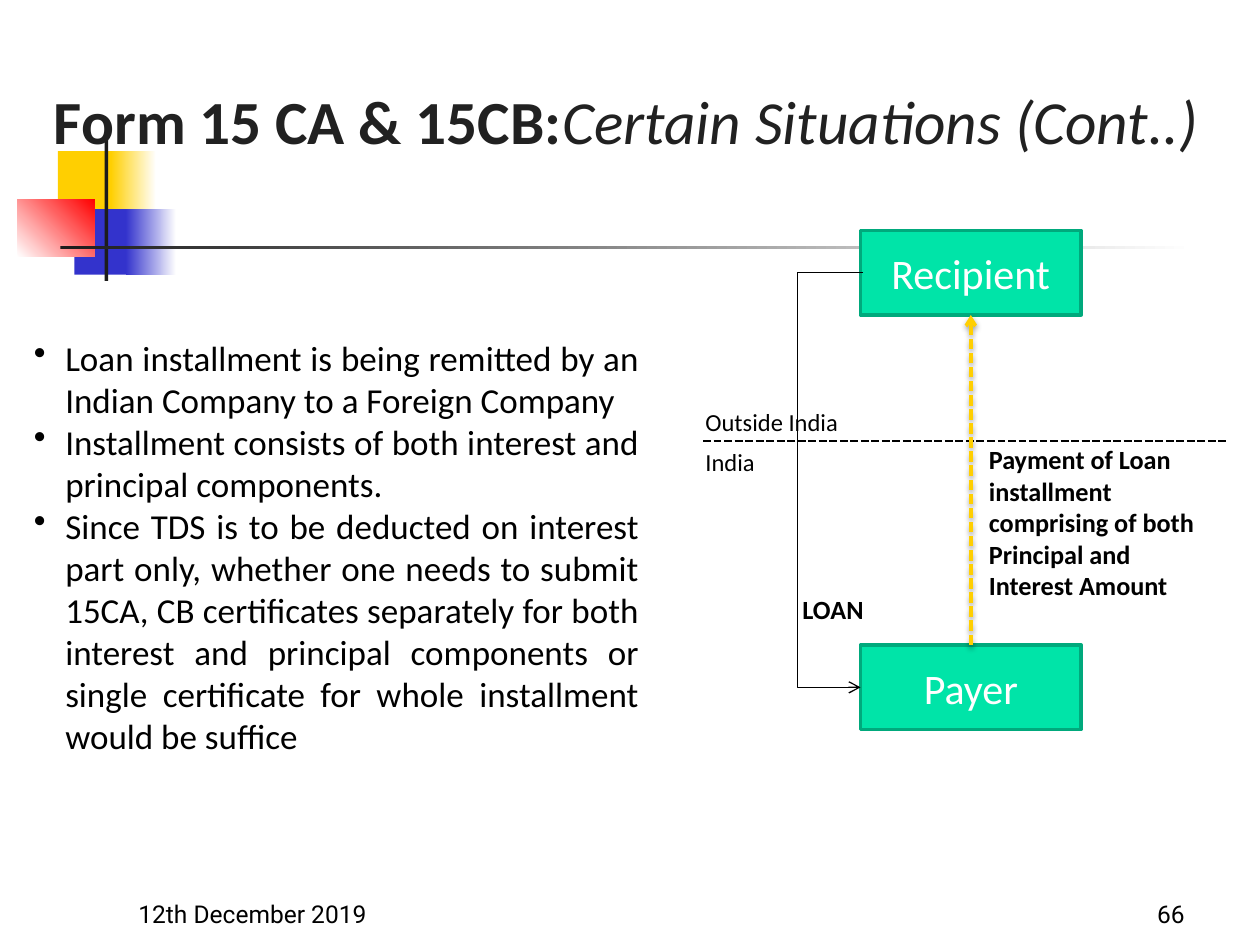
from dataclasses import dataclass

from lxml import etree
from pptx import Presentation
from pptx.dml.color import RGBColor
from pptx.enum.dml import MSO_LINE
from pptx.enum.shapes import MSO_CONNECTOR, MSO_SHAPE
from pptx.enum.text import MSO_ANCHOR, PP_ALIGN
from pptx.oxml.ns import qn
from pptx.util import Inches, Pt

RECT = MSO_SHAPE.RECTANGLE
STRAIGHT, ELBOW = MSO_CONNECTOR.STRAIGHT, MSO_CONNECTOR.ELBOW
DASHED = MSO_LINE.SQUARE_DOT
TOP, MIDDLE, BOTTOM = MSO_ANCHOR.TOP, MSO_ANCHOR.MIDDLE, MSO_ANCHOR.BOTTOM
LEFT, CENTER, RIGHT, JUSTIFY = PP_ALIGN.LEFT, PP_ALIGN.CENTER, PP_ALIGN.RIGHT, PP_ALIGN.JUSTIFY


@dataclass(frozen=True)
class Theme:
    font: str = "Calibri"
    footer_font: str = "Roboto"
    black: str = "000000"
    white: str = "FFFFFF"
    title: str = "212121"
    bar: str = "1C1C1C"
    yellow: str = "FFCF01"
    blue: str = "3333CC"
    red: str = "FF0000"
    green: str = "00E4A8"
    green_edge: str = "00A97C"
    title_size: int = 35
    box_size: int = 24
    body_size: int = 20
    label_size: int = 15
    small_size: int = 14


T = Theme()

DECORATION = [
    ((0.46, 1.2, 0.48, 0.52), [T.yellow], 0),
    ((0.88, 1.2, 0.36, 0.52), [T.yellow, T.white], 0),
    ((0.59, 1.66, 0.46, 0.52), [T.blue], 0),
    ((1, 1.66, 0.4, 0.52), [T.blue, T.white], 0),
    ((0.14, 1.58, 0.61, 0.46), [T.white, T.red], 45),
    ((0.83, 1.08, 0.03, 1.15), [T.bar], 0),
    ((0.48, 1.95, 9, 0.03), [T.bar, T.white], 0),
]
TITLE = [("Form 15 CA & 15CB:", True, False), ("Certain Situations (Cont..)", False, True)]
BULLETS = [
    "Loan installment is being remitted by an Indian Company to a Foreign Company",
    "Installment consists of both interest and principal components.",
    "Since TDS is to be deducted on interest part only, whether one needs to submit "
    "15CA, CB certificates separately for both interest and principal components or "
    "single certificate for whole installment would be suffice",
]
LABELS = [
    ("Outside India", (5.5, 3.18, 2, 0.34), T.small_size, False),
    ("India", (5.5, 3.5, 1, 0.34), T.small_size, False),
    ("LOAN", (6.27, 4.66, 2, 0.35), T.label_size, True),
    ("Payment of Loan installment comprising of both Principal and Interest Amount",
     (7.75, 3.47, 2, 1.36), T.label_size, True),
]
FOOTERS = [
    ("12th December 2019", (1, 6.92, 2.08, 0.5), LEFT),
    ("66", (7.42, 6.92, 2.08, 0.5), RIGHT),
]
BOX_LEFT, BOX_W, BOX_H = 6.83, 1.75, 0.67
RECIPIENT_TOP, PAYER_TOP = 1.83, 5.12
LOAN_START, LOAN_TURN = 6.85, 6.33


def inches(values):
    return [Inches(v) for v in values]


def rgb(color):
    return RGBColor.from_string(color)


def set_font(font, size, color=T.black, bold=False, name=T.font):
    font.name, font.size, font.bold = name, Pt(size), bold
    font.color.rgb = rgb(color)


def add_rect(s, at, colors, angle=0):
    sp = s.shapes.add_shape(RECT, *inches(at))
    sp.shadow.inherit = False
    sp.line.fill.background()
    if len(colors) == 1:
        sp.fill.solid()
        sp.fill.fore_color.rgb = rgb(colors[0])
    else:
        sp.fill.gradient()
        sp.fill.gradient_angle = angle
        for stop, color in zip(sp.fill.gradient_stops, colors):
            stop.color.rgb = rgb(color)
    return sp


def add_party(s, text, top):
    sp = add_rect(s, (BOX_LEFT, top, BOX_W, BOX_H), [T.green])
    sp.line.color.rgb = rgb(T.green_edge)
    sp.line.width = Pt(2)
    sp.text_frame.vertical_anchor = MIDDLE
    p = sp.text_frame.paragraphs[0]
    p.text, p.alignment = text, CENTER
    set_font(p.font, T.box_size, T.white)
    return sp


def add_text(s, at, lines, size, bold=False, name=T.font, align=LEFT, anchor=TOP):
    tf = s.shapes.add_textbox(*inches(at)).text_frame
    tf.word_wrap, tf.vertical_anchor = True, anchor
    for i, line in enumerate(lines):
        p = tf.add_paragraph() if i else tf.paragraphs[0]
        p.text, p.alignment = line, align
        set_font(p.font, size, bold=bold, name=name)
    return tf


def add_bullet(p, indent):
    pPr = p._p.get_or_add_pPr()
    pPr.set("marL", str(indent))
    pPr.set("indent", str(-indent))
    bullet = etree.Element(qn("a:buChar"), char="•")
    pPr.insert_element_before(bullet, "a:tabLst", "a:defRPr", "a:extLst")


def add_line(s, kind, points, color, width, dashed=False, arrow=False):
    cn = s.shapes.add_connector(kind, *inches(points))
    cn.line.color.rgb = rgb(color)
    cn.line.width = Pt(width)
    if dashed:
        cn.line.dash_style = DASHED
    if arrow:
        etree.SubElement(cn.line._get_or_add_ln(), qn("a:tailEnd"), type="arrow")
    effects = etree.SubElement(cn._element.spPr, qn("a:effectLst"))
    return cn, effects


def main():
    prs = Presentation()
    prs.slide_width, prs.slide_height = Inches(10), Inches(7.5)
    s = prs.slides.add_slide(prs.slide_layouts[6])

    for at, colors, angle in DECORATION:
        add_rect(s, at, colors, angle)

    tf = add_text(s, (0.17, 2.62, 5, 3.47), BULLETS, T.body_size, align=JUSTIFY)
    for p in tf.paragraphs:
        add_bullet(p, Inches(0.25))

    payer = add_party(s, "Payer", PAYER_TOP)
    recipient = add_party(s, "Recipient", RECIPIENT_TOP)

    add_line(s, STRAIGHT, (5.58, 3.5, 9.75, 3.5), T.black, 1.5, dashed=True)

    mid_x = BOX_LEFT + BOX_W / 2
    payment, effects = add_line(s, STRAIGHT, (mid_x, PAYER_TOP, mid_x, RECIPIENT_TOP + BOX_H),
                                T.yellow, 2, dashed=True, arrow=True)
    payment.begin_connect(payer, 0)
    payment.end_connect(recipient, 2)
    shadow = etree.SubElement(effects, qn("a:outerShdw"), blurRad=str(Pt(3.1)),
                              dist=str(Pt(1.6)), dir="5400000", rotWithShape="0")
    tint = etree.SubElement(shadow, qn("a:srgbClr"), val=T.black)
    etree.SubElement(tint, qn("a:alpha"), val="38000")

    loan, _ = add_line(s, ELBOW, (LOAN_START, RECIPIENT_TOP + BOX_H / 2,
                                  BOX_LEFT, PAYER_TOP + BOX_H / 2), T.black, 0.75, arrow=True)
    turn = round((LOAN_START - LOAN_TURN) / (LOAN_START - BOX_LEFT) * 100000)
    guides = loan._element.spPr.find(qn("a:prstGeom")).get_or_add_avLst()
    etree.SubElement(guides, qn("a:gd"), name="adj1", fmla=f"val {turn}")

    for text, at, size, bold in LABELS:
        add_text(s, at, [text], size, bold)

    tf = add_text(s, (0.33, 0.33, 9.75, 1.25), [""], T.title_size, anchor=MIDDLE)
    for text, bold, italic in TITLE:
        r = tf.paragraphs[0].add_run()
        r.text = text
        set_font(r.font, T.title_size, T.title, bold)
        r.font.italic = italic

    for text, at, align in FOOTERS:
        add_text(s, at, [text], T.small_size, name=T.footer_font, align=align, anchor=BOTTOM)

    prs.save("out.pptx")


if __name__ == "__main__":
    main()
